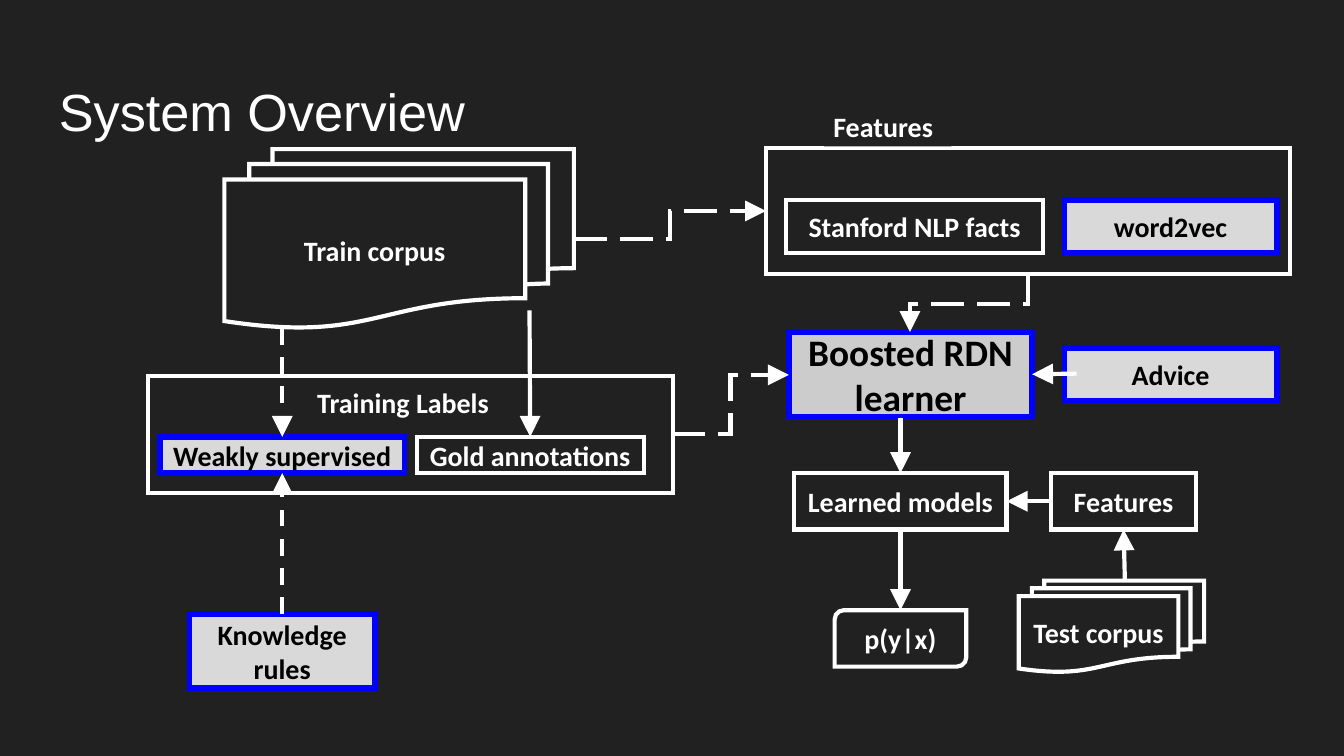
from lxml.etree import SubElement
from pptx import Presentation
from pptx.dml.color import RGBColor
from pptx.enum.dml import MSO_LINE as Dash
from pptx.enum.shapes import MSO_CONNECTOR as Link, MSO_SHAPE as Kind
from pptx.enum.text import MSO_ANCHOR as Anchor, PP_ALIGN as Align
from pptx.oxml.ns import qn
from pptx.util import Inches, Pt

DARK = RGBColor(0x21, 0x21, 0x21)
WHITE = RGBColor(0xFF, 0xFF, 0xFF)
BLACK = RGBColor(0, 0, 0)
BLUE = RGBColor(0, 0, 0xFF)
PALE = RGBColor(0xD9, 0xD9, 0xD9)
GRAY = RGBColor(0xCC, 0xCC, 0xCC)
TOP, LEFT, BOTTOM, RIGHT = range(4)


def write(shape, text, color, size=15, font="Calibri", bold=True,
          align=Align.CENTER, anchor=Anchor.MIDDLE, pad=(0.07, 0.04)):
    frame = shape.text_frame
    frame.word_wrap = True
    frame.vertical_anchor = anchor
    frame.margin_left = frame.margin_right = Inches(pad[0])
    frame.margin_top = frame.margin_bottom = Inches(pad[1])
    par = frame.paragraphs[0]
    par.text = text
    par.alignment = align
    par.font.name = font
    par.font.size = Pt(size)
    par.font.bold = bold
    par.font.color.rgb = color


def add_box(slide, area, text="", kind=Kind.RECTANGLE, fill=None,
            line=WHITE, width=2.25, color=WHITE, **style):
    shape = slide.shapes.add_shape(kind, *map(Inches, area))
    shape.shadow.inherit = False
    if fill is None:
        shape.fill.background()
    else:
        shape.fill.solid()
        shape.fill.fore_color.rgb = fill
    if line is None:
        shape.line.fill.background()
    else:
        shape.line.color.rgb = line
        shape.line.width = Pt(width)
        SubElement(shape.line._get_or_add_ln(), qn("a:miter"), lim="800000")
    if text:
        write(shape, text, color, **style)
    return shape


def add_key(slide, area, text, fill=PALE, size=15):
    return add_box(slide, area, text, fill=fill, line=BLUE, width=3,
                   color=BLACK, size=size)


def add_label(slide, area, text):
    add_box(slide, area, text, fill=DARK, line=None, align=Align.LEFT)


def add_arrow(slide, start, end, dash=None, kind=Link.STRAIGHT,
              tail=None, head=None):
    link = slide.shapes.add_connector(kind, *map(Inches, start + end))
    if tail:
        link.begin_connect(*tail)
    if head:
        link.end_connect(*head)
    link.line.color.rgb = WHITE
    link.line.width = Pt(2.25)
    if dash:
        link.line.dash_style = dash
    line = link.line._get_or_add_ln()
    SubElement(line, qn("a:miter"), lim="800000")
    SubElement(line, qn("a:tailEnd"), type="triangle", w="lg", len="lg")
    SubElement(link._element.spPr, qn("a:effectLst"))
    return link


def add_bend(slide, start, end):
    add_arrow(slide, start, end, Dash.LONG_DASH, Link.ELBOW)


def add_drop(slide, start, end):
    mid_x, mid_y = (start[0] + end[0]) / 2, (start[1] + end[1]) / 2
    half_w, half_h = (end[1] - start[1]) / 2, (start[0] - end[0]) / 2
    link = add_arrow(slide, (mid_x - half_w, mid_y - half_h),
                     (mid_x + half_w, mid_y + half_h),
                     Dash.LONG_DASH, Link.ELBOW)
    link._element.spPr.find(qn("a:xfrm")).set("rot", str(90 * 60000))


def add_title(slide, area, text):
    box = slide.shapes.add_textbox(*map(Inches, area))
    write(box, text, WHITE, 28, "Arial", False, Align.LEFT, Anchor.TOP,
          (0.1, 0.1))


def add_train(slide):
    add_box(slide, (1.1, 2.8, 3.91, 0.87))
    add_label(slide, (2.29, 2.83, 1.68, 0.33), "Training Labels")
    gold = add_box(slide, (3.1, 3.25, 1.69, 0.27), "Gold annotations")
    weak = add_key(slide, (1.19, 3.25, 1.82, 0.27), "Weakly supervised")
    rules = add_key(slide, (1.41, 4.57, 1.38, 0.55), "Knowledge rules")
    add_box(slide, (1.67, 1.11, 2.6, 1.33), "Train corpus",
            Kind.FLOWCHART_MULTIDOCUMENT)
    add_arrow(slide, (2.1, 2.44), (2.1, 3.25), Dash.DASH, head=(weak, TOP))
    add_arrow(slide, (2.1, 4.57), (2.1, 3.52), Dash.DASH,
              tail=(rules, TOP), head=(weak, BOTTOM))
    add_arrow(slide, (3.94, 2.31), (3.94, 3.25), head=(gold, TOP))


def add_learn(slide):
    add_box(slide, (5.7, 1.1, 3.9, 0.94))
    add_label(slide, (6.13, 0.79, 0.95, 0.3), "Features")
    add_box(slide, (5.85, 1.49, 1.91, 0.39), "Stanford NLP facts")
    add_key(slide, (7.92, 1.49, 1.58, 0.39), "word2vec")
    add_key(slide, (7.92, 2.59, 1.58, 0.39), "Advice")
    learner = add_key(slide, (5.87, 2.47, 1.81, 0.63),
                      "Boosted RDN learner", GRAY, 20)
    add_arrow(slide, (8.01, 2.78), (7.68, 2.78), Dash.LONG_DASH,
              head=(learner, RIGHT))
    add_bend(slide, (4.27, 1.78), (5.7, 1.57))
    add_bend(slide, (5, 3.23), (5.87, 2.79))
    add_drop(slide, (7.65, 2.05), (6.77, 2.47))


def add_test(slide):
    model = add_box(slide, (5.91, 3.52, 1.58, 0.42), "Learned models")
    facts = add_box(slide, (7.82, 3.52, 1.08, 0.42), "Features")
    add_box(slide, (7.58, 4.32, 1.38, 0.68), "Test corpus",
            Kind.FLOWCHART_MULTIDOCUMENT)
    add_box(slide, (6.21, 4.54, 0.98, 0.42), "p(y|x)",
            Kind.ROUND_2_DIAG_RECTANGLE)
    add_arrow(slide, (6.7, 3.11), (6.7, 3.52), head=(model, TOP))
    add_arrow(slide, (6.7, 3.94), (6.7, 4.54), tail=(model, BOTTOM))
    add_arrow(slide, (8.37, 4.32), (8.36, 3.94), Dash.LONG_DASH,
              head=(facts, BOTTOM))
    add_arrow(slide, (7.82, 3.73), (7.49, 3.73), Dash.LONG_DASH,
              tail=(facts, LEFT), head=(model, RIGHT))


def main():
    deck = Presentation()
    deck.slide_width = Inches(10)
    deck.slide_height = deck.slide_width * 9 // 16
    slide = deck.slides.add_slide(deck.slide_layouts[6])
    slide.background.fill.solid()
    slide.background.fill.fore_color.rgb = DARK
    add_title(slide, (0.34, 0.49, 9.32, 0.63), "System Overview")
    add_train(slide)
    add_learn(slide)
    add_test(slide)
    deck.save("out.pptx")


if __name__ == "__main__":
    main()
